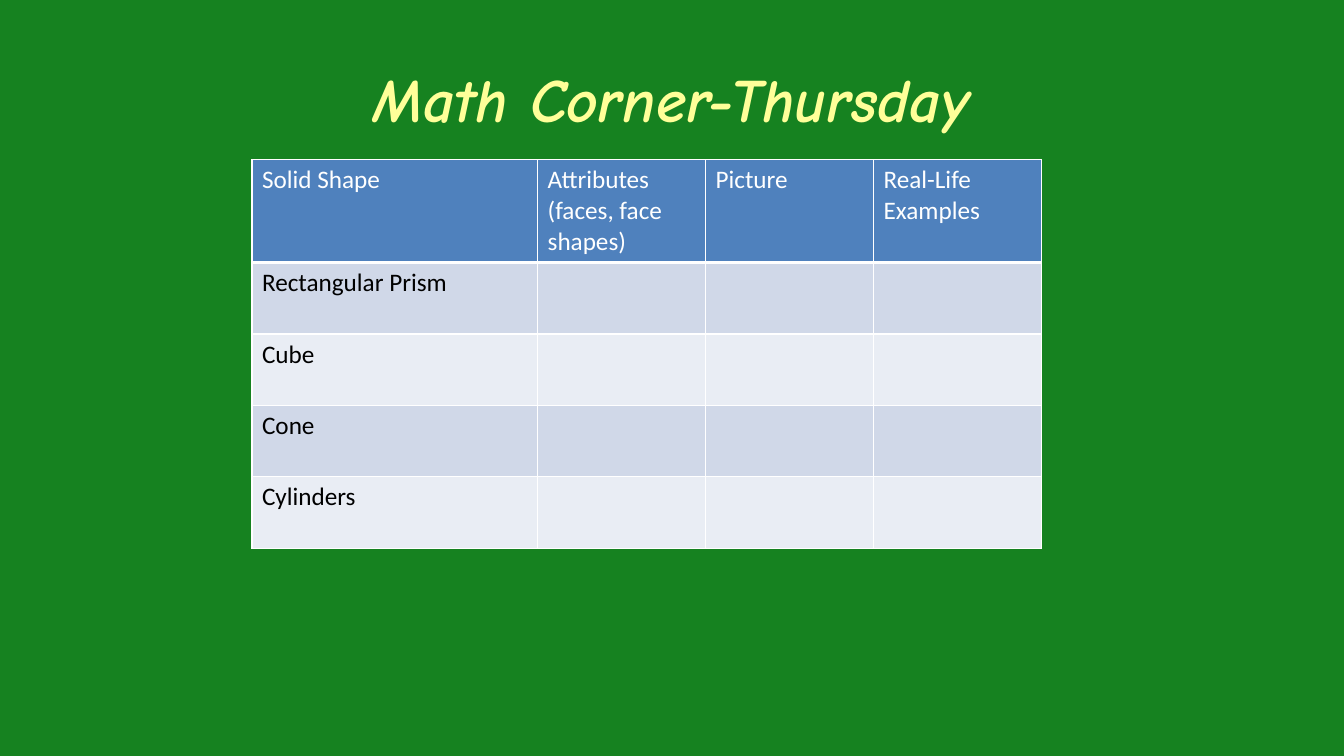
from lxml import etree
from pptx import Presentation
from pptx.dml.color import RGBColor
from pptx.enum.text import MSO_ANCHOR, PP_ALIGN
from pptx.oxml.ns import qn
from pptx.util import Pt

CENTER = PP_ALIGN.CENTER
MIDDLE = MSO_ANCHOR.MIDDLE

GREEN, YELLOW = "168220", "FFFF99"
WHITE, BLACK = "FFFFFF", "000000"
HEADER_FILL = "4F81BD"
BAND_FILLS = ["D0D8E8", "E9EDF4"]

HEADINGS = ["Solid Shape", "Attributes\n(faces, face shapes)", "Picture", "Real-Life Examples"]
SOLIDS = ["Rectangular Prism", "Cube", "Cone", "Cylinders"]


def color(hex_string):
    return RGBColor.from_string(hex_string)


def format_runs(text_frame, name, size, hex_string, bold=False, italic=False):
    for paragraph in text_frame.paragraphs:
        for run in paragraph.runs:
            font = run.font
            font.name, font.size = name, Pt(size)
            font.bold, font.italic = bold, italic
            font.color.rgb = color(hex_string)


def add_title(slide, left, top, width, height):
    title = slide.shapes.add_textbox(Pt(left), Pt(top), Pt(width), Pt(height))
    text_frame = title.text_frame
    text_frame.word_wrap = True
    text_frame.vertical_anchor = MIDDLE
    text_frame.text = "Math Corner-Thursday"
    text_frame.paragraphs[0].alignment = CENTER
    format_runs(text_frame, "Comic Neue", 44, YELLOW, bold=True, italic=True)


def set_borders(cell, widths):
    properties = cell._tc.get_or_add_tcPr()
    for side, width in widths.items():
        line = etree.SubElement(properties, qn(f"a:ln{side}"), w=str(Pt(width)))
        fill = etree.SubElement(line, qn("a:solidFill"))
        etree.SubElement(fill, qn("a:srgbClr"), val=WHITE)


def fill_cell(cell, text, fill, text_color, widths):
    set_borders(cell, widths)
    cell.fill.solid()
    cell.fill.fore_color.rgb = color(fill)
    cell.text_frame.text = text
    format_runs(cell.text_frame, "Calibri", 18, text_color)


def add_solids_table(slide, left, top, width, height):
    rows = [HEADINGS] + [[solid, "", "", ""] for solid in SOLIDS]
    frame = slide.shapes.add_table(len(rows), len(HEADINGS), Pt(left), Pt(top), Pt(width), Pt(height))
    table = frame.table
    table.first_row = table.horz_banding = False

    # First column is wider; the others share the rest equally
    first_width, header_height = 204, 73.6
    for index, column in enumerate(table.columns):
        column.width = Pt(first_width if index == 0 else (width - first_width) / (len(HEADINGS) - 1))
    for index, row in enumerate(table.rows):
        row.height = Pt(header_height if index == 0 else (height - header_height) / len(SOLIDS))

    # Header row, then alternating bands
    for row_index, texts in enumerate(rows):
        is_header = row_index == 0
        fill = HEADER_FILL if is_header else BAND_FILLS[(row_index - 1) % 2]
        widths = {"L": 1, "R": 1, "T": 3 if row_index == 1 else 1, "B": 3 if is_header else 1}
        for column_index, text in enumerate(texts):
            fill_cell(table.cell(row_index, column_index), text, fill,
                      WHITE if is_header else BLACK, widths)


def main():
    presentation = Presentation()
    presentation.slide_width, presentation.slide_height = Pt(960), Pt(540)
    slide = presentation.slides.add_slide(presentation.slide_layouts[6])
    slide.background.fill.solid()
    slide.background.fill.fore_color.rgb = color(GREEN)
    add_title(slide, 72, 12, 816, 116)
    add_solids_table(slide, 180, 114, 564, 277.6)
    presentation.save("out.pptx")


if __name__ == "__main__":
    main()
